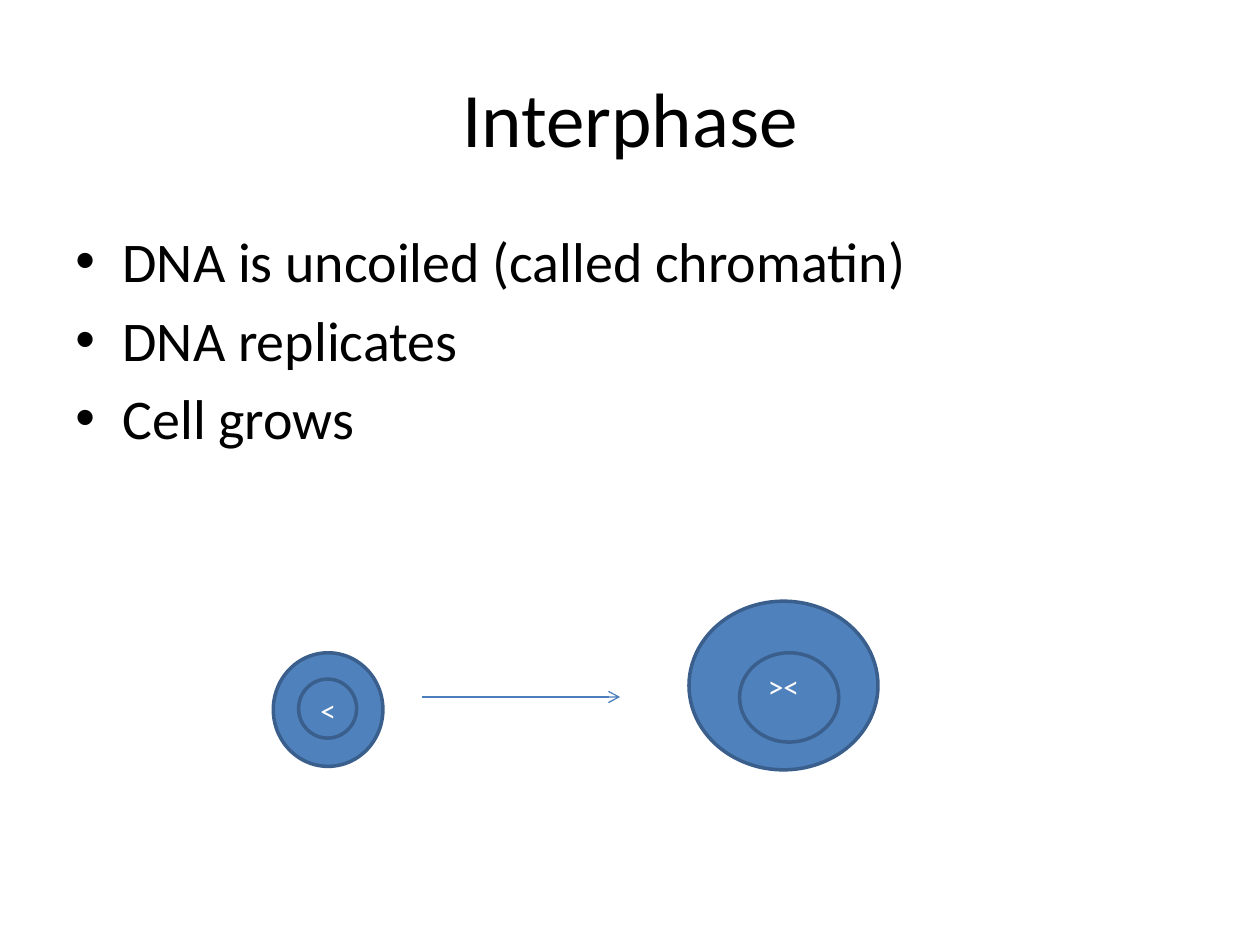
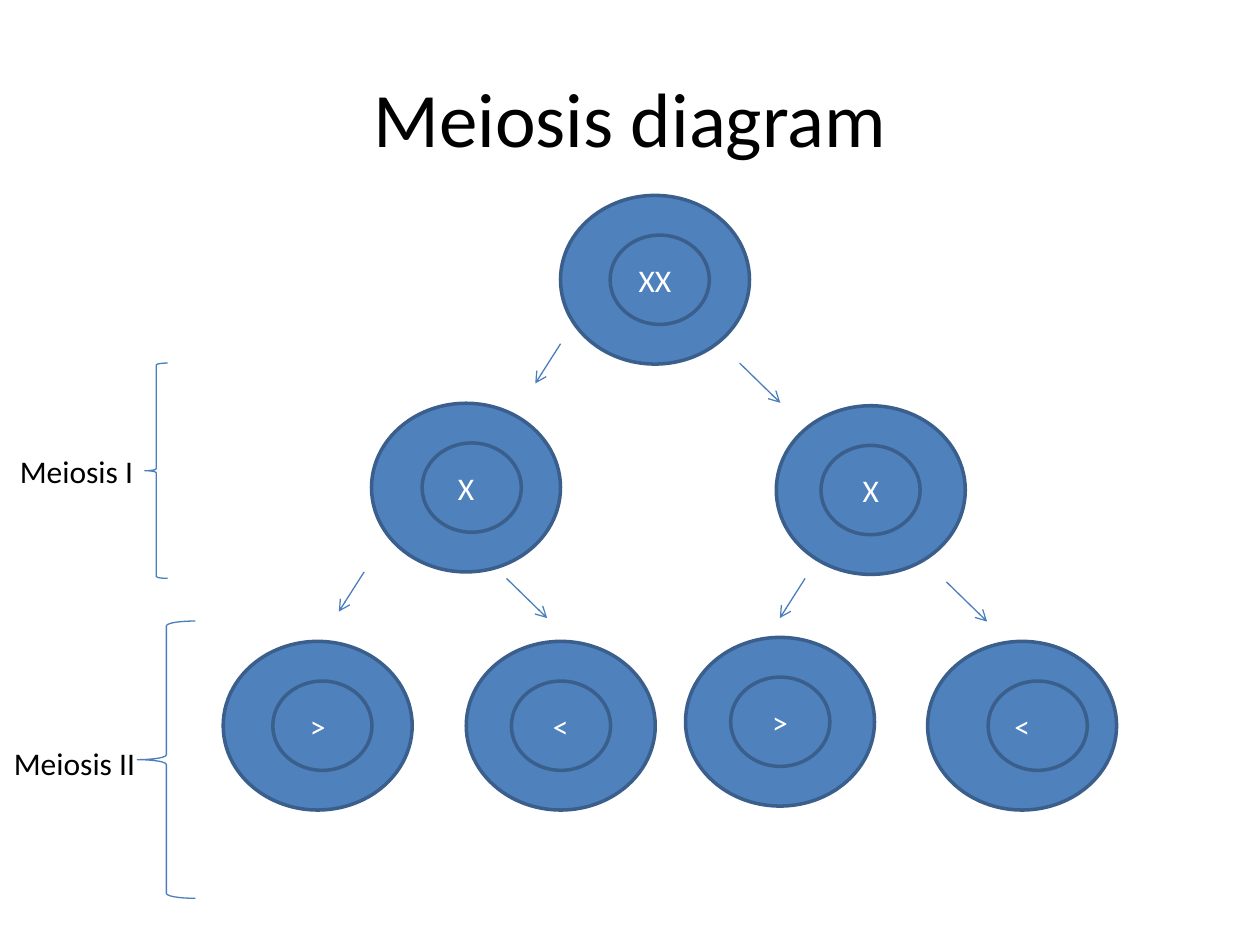
from dataclasses import dataclass

import lxml.etree
import pptx
import pptx.dml.color
import pptx.enum.shapes
import pptx.enum.text
import pptx.oxml.ns
import pptx.util

Cm = pptx.util.Cm
Pt = pptx.util.Pt
Shape = pptx.enum.shapes.MSO_SHAPE
Align = pptx.enum.text.PP_ALIGN
Anchor = pptx.enum.text.MSO_ANCHOR
qn = pptx.oxml.ns.qn


def rgb(value):
    return pptx.dml.color.RGBColor.from_string(value)


@dataclass(frozen=True)
class Theme:
    font: str = "Calibri"
    ink: str = "000000"
    paper: str = "FFFFFF"
    cell_fill: str = "4F81BD"
    cell_line: str = "3A5F8C"
    thin_line: str = "4B7EBC"
    title_size: int = 44
    bullet_size: int = 32
    label_size: int = 18
    cell_line_width: float = 2
    thin_line_width: float = 0.75


THEME = Theme()
TITLE_ONLY = 5
CELL_SIZE = (3.81, 3.4)
NUCLEUS_SIZE = (2, 1.8)
NUCLEUS_DROP = 0.8
ARROW_LEFT = (-0.51, 0.8)
ARROW_RIGHT = (0.82, 0.8)


def lengths(*values):
    return [Cm(value) for value in values]


def format_text(frame, size, color, alignment):
    for para in frame.paragraphs:
        para.alignment = alignment
        for span in para.runs:
            span.font.name = THEME.font
            span.font.size = Pt(size)
            span.font.color.rgb = rgb(color)


def set_line(item, color, width):
    item.line.color.rgb = rgb(color)
    item.line.width = Pt(width)


def add_page(deck, title):
    page = deck.slides.add_slide(deck.slide_layouts[TITLE_ONLY])
    page.background.fill.solid()
    page.background.fill.fore_color.rgb = rgb(THEME.paper)
    box = page.shapes.title
    box.left, box.top, box.width, box.height = lengths(1.27, 0.76, 22.86, 3.18)
    box.text_frame.text = title
    box.text_frame.vertical_anchor = Anchor.MIDDLE
    format_text(box.text_frame, THEME.title_size, THEME.ink, Align.CENTER)
    return page


def add_bullets(page, items):
    box = page.shapes.add_textbox(*lengths(1.27, 4.45, 22.86, 12.57))
    frame = box.text_frame
    frame.word_wrap = True
    frame.text = "\n".join(items)
    format_text(frame, THEME.bullet_size, THEME.ink, Align.LEFT)
    for para in frame.paragraphs:
        para.space_before = Pt(0.2 * THEME.bullet_size)
        properties = para._p.get_or_add_pPr()
        properties.set("marL", str(Cm(0.95)))
        properties.set("indent", str(-Cm(0.95)))
        bullet_font = lxml.etree.SubElement(properties, qn("a:buFont"))
        bullet_font.set("typeface", "Arial")
        bullet = lxml.etree.SubElement(properties, qn("a:buChar"))
        bullet.set("char", "•")


def add_outline(page, kind, place, color, width):
    """Add an unfilled shape; place is left, top, width and height in cm."""
    shape = page.shapes.add_shape(kind, *lengths(*place))
    shape.shadow.inherit = False
    shape.fill.background()
    set_line(shape, color, width)
    return shape


def add_oval(page, place):
    return add_outline(page, Shape.OVAL, place, THEME.cell_line, THEME.cell_line_width)


def add_cell(page, text, left, top, nucleus_offset,
             size=CELL_SIZE, nucleus_size=NUCLEUS_SIZE):
    cell = add_oval(page, (left, top, *size))
    cell.fill.solid()
    cell.fill.fore_color.rgb = rgb(THEME.cell_fill)
    cell.text_frame.text = text
    cell.text_frame.vertical_anchor = Anchor.MIDDLE
    format_text(cell.text_frame, THEME.label_size, THEME.paper, Align.CENTER)
    across, down = nucleus_offset
    add_oval(page, (left + across, top + down, *nucleus_size))


def add_arrow(page, left, top, reach):
    across, down = reach
    arrow = page.shapes.add_connector(
        pptx.enum.shapes.MSO_CONNECTOR.STRAIGHT,
        *lengths(left, top, left + across, top + down))
    set_line(arrow, THEME.thin_line, THEME.thin_line_width)
    head = lxml.etree.SubElement(arrow.line._get_or_add_ln(), qn("a:tailEnd"))
    head.set("type", "arrow")
    lxml.etree.SubElement(arrow._element.spPr, qn("a:effectLst"))


def add_stage(page, name, label_place, brace_place):
    """Name a stage of division and brace the rows it covers."""
    label = page.shapes.add_textbox(*lengths(*label_place))
    frame = label.text_frame
    frame.word_wrap = False
    frame.auto_size = pptx.enum.text.MSO_AUTO_SIZE.SHAPE_TO_FIT_TEXT
    frame.text = name
    format_text(frame, THEME.label_size, THEME.ink, Align.LEFT)
    add_outline(page, Shape.LEFT_BRACE, brace_place,
                THEME.thin_line, THEME.thin_line_width)


def build_interphase(deck):
    page = add_page(deck, "Interphase")
    add_bullets(page, ["DNA is uncoiled (called chromatin)",
                       "DNA replicates", "Cell grows"])
    add_cell(page, "><", 13.89, 12.12, (1.02, 1.04))
    add_cell(page, "<", 5.51, 13.16, (0.51, 0.53),
             size=(2.21, 2.29), nucleus_size=(1.17, 1.19))
    add_arrow(page, 8.51, 14.05, (3.99, 0))


def build_meiosis(deck):
    page = add_page(deck, "Meiosis diagram")
    cells = [
        ("XX", 11.3, 3.94, 1),
        ("X", 7.49, 8.13, 1.02),
        ("X", 15.65, 8.18, 0.9),
        (">", 4.5, 12.93, 1),
        ("<", 9.4, 12.93, 0.91),
        (">", 13.82, 12.85, 0.91),
        ("<", 18.7, 12.93, 1.22),
    ]
    for text, left, top, nucleus_across in cells:
        add_cell(page, text, left, top, (nucleus_across, NUCLEUS_DROP))
    for left, top in [(11.3, 6.93), (7.34, 11.53), (16.23, 11.66)]:
        add_arrow(page, left, top, ARROW_LEFT)
    for left, top in [(14.91, 7.32), (10.21, 11.66), (19.08, 11.73)]:
        add_arrow(page, left, top, ARROW_RIGHT)
    add_stage(page, "Meiosis I", (0.15, 8.99, 2.82, 1.02), (2.92, 7.32, 0.46, 4.34))
    add_stage(page, "Meiosis II", (0.03, 14.88, 2.97, 1.02), (2.77, 12.52, 1.17, 5.59))


def main():
    deck = pptx.Presentation()
    deck.slide_width, deck.slide_height = lengths(25.4, 19.05)
    build_interphase(deck)
    build_meiosis(deck)
    deck.save("out.pptx")


if __name__ == "__main__":
    main()
